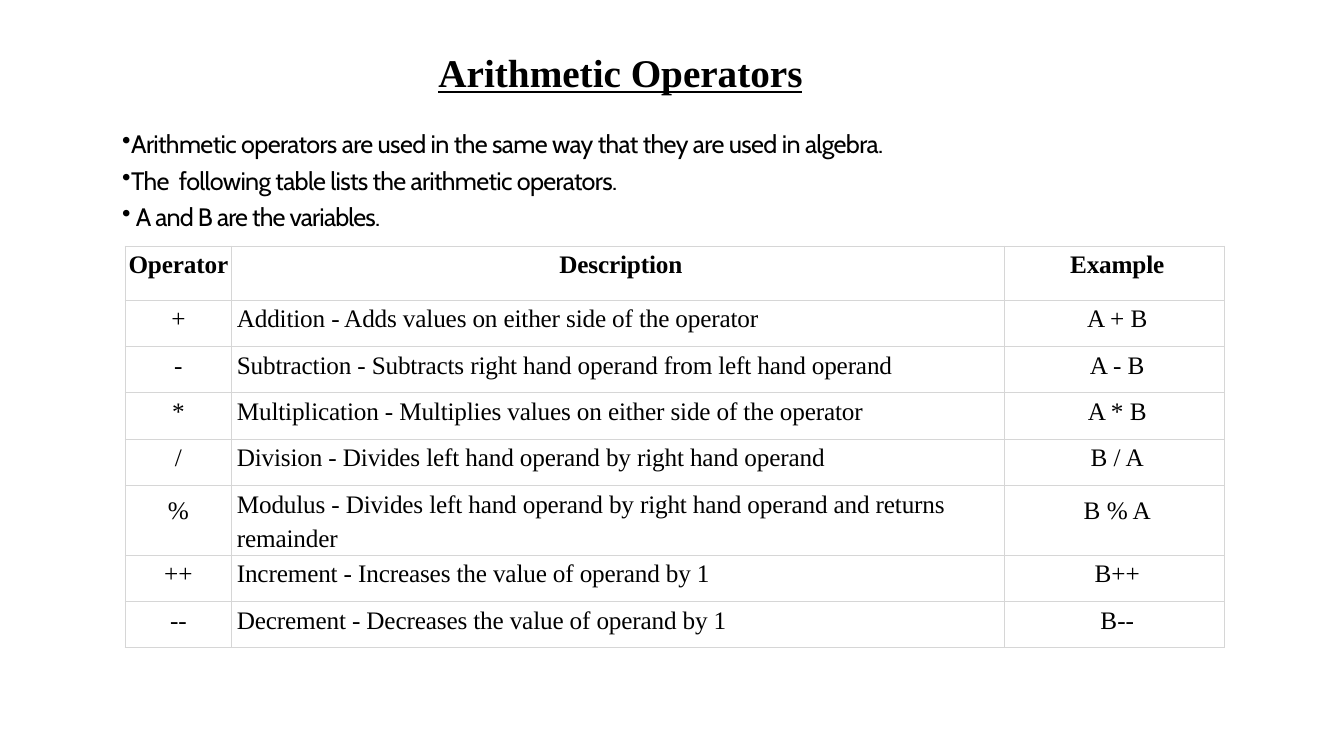
from lxml import etree
from pptx import Presentation
from pptx import util as u
from pptx.dml.color import RGBColor
from pptx.enum import text
from pptx.oxml import ns

LEFT, MID = text.PP_ALIGN.LEFT, text.PP_ALIGN.CENTER
TITLE = "Arithmetic Operators"
NOTES = [
    ("Arithmetic operators are used in the same way that they are used in algebra.", -0.45),
    ("The  following table lists the arithmetic operators.", -0.48),
    (" A and B are the variables.", -0.6),
]
ROWS = [
    ("Operator", "Description", "Example"),
    ("+", "Addition - Adds values on either side of the operator", "A + B"),
    ("-", "Subtraction - Subtracts right hand operand from left hand operand", "A - B"),
    ("*", "Multiplication - Multiplies values on either side of the operator", "A * B"),
    ("/", "Division - Divides left hand operand by right hand operand", "B / A"),
    ("%", "Modulus - Divides left hand operand by right hand operand and returns\nremainder", "B % A"),
    ("++", "Increment - Increases the value of operand by 1", "B++"),
    ("--", "Decrement - Decreases the value of operand by 1", "B--"),
]
WIDTHS = [76.3, 552.2, 157]
HEIGHTS = [39, 33, 33, 33, 33, 50.2, 33, 33]


def paint(code):
    """Turn a hex string into a colour."""
    return RGBColor.from_string(code)


def apply(item, **look):
    """Set each format value on an item."""
    for name, value in look.items():
        setattr(item, name, value)


def add(parent, tag, **attrs):
    """Append a drawing element with attributes."""
    return etree.SubElement(parent, ns.qn(tag), attrs)


class Page:
    """Hold the style and the current slide."""

    serif, sans = "Times New Roman", "Cabin"
    ink, paper, rule = "000000", "FFFFFF", "D6D6D6"

    def __init__(self, deck):
        """Start a title-only slide."""
        self.slide = deck.slides.add_slide(deck.slide_layouts[5])

    def frame(self, frame, pads, anchor):
        """Set the insets and anchor of a text frame."""
        left, top, right, low = map(u.Pt, pads)
        apply(frame, word_wrap=True, auto_size=text.MSO_AUTO_SIZE.NONE,
              vertical_anchor=anchor, margin_left=left, margin_top=top,
              margin_right=right, margin_bottom=low)

    def phrase(self, para, words, font, size, track=0, dent=0, look=None, **form):
        """Fill a paragraph with one styled run."""
        apply(para, **form)
        run = para.add_run()
        run.text = words
        apply(run.font, name=font, size=u.Pt(size), **(look or {}))
        run.font.color.rgb = paint(self.ink)
        run._r.get_or_add_rPr().set("spc", str(round(track * 100)))
        props = para._p.get_or_add_pPr()
        props.set("marL", str(u.Pt(dent)))
        props.set("indent", "0")
        return props

    def title(self, words, *box):
        """Place and format the title."""
        shape = self.slide.shapes.title
        apply(shape, **dict(zip(("left", "top", "width", "height"), map(u.Pt, box))))
        self.frame(shape.text_frame, (7.2, 3.6, 7.2, 3.6), text.MSO_ANCHOR.MIDDLE)
        self.phrase(shape.text_frame.paragraphs[0], words, self.serif, 28,
                    look={"bold": True, "underline": True},
                    alignment=LEFT, line_spacing=0.9)

    def points(self, notes, *box):
        """Draw a bulleted list."""
        frame = self.slide.shapes.add_textbox(*map(u.Pt, box)).text_frame
        self.frame(frame, (0, 0.9, 0, 0), text.MSO_ANCHOR.TOP)
        for i, (words, track) in enumerate(notes):
            para = frame.add_paragraph() if i else frame.paragraphs[0]
            props = self.phrase(para, words, self.sans, 18, track, 0.9,
                                line_spacing=1.17, space_before=u.Pt(0.9))
            add(props, "a:buChar", char="•")

    def cell(self, cell, words, head, column, gap):
        """Fill and edge one table cell."""
        props = cell._tc.get_or_add_tcPr()
        for side in "LRTB":
            line = add(props, f"a:ln{side}", w=str(u.Pt(0.75)))
            add(add(line, "a:solidFill"), "a:srgbClr", val=self.rule)
        cell.fill.solid()
        cell.fill.fore_color.rgb = paint(self.paper)
        apply(cell, margin_left=0, margin_right=0, margin_bottom=0, margin_top=u.Pt(gap))
        track = -0.1 if head or column == 1 else 0
        align = LEFT if column == 1 and not head else MID
        frame = cell.text_frame
        for i, part in enumerate(words.split("\n")):
            para = frame.add_paragraph() if i else frame.paragraphs[0]
            self.phrase(para, part, self.serif, 18, track, 3.6 if column else 0,
                        {"bold": head}, alignment=align, space_before=u.Pt(gap))

    def table(self, rows, widths, heights, left, top):
        """Draw the table of operators."""
        box = map(u.Pt, (left, top, sum(widths), sum(heights)))
        table = self.slide.shapes.add_table(len(rows), len(widths), *box).table
        apply(table, first_row=False, horz_banding=False)
        for column, width in zip(table.columns, widths):
            column.width = u.Pt(width)
        for r, (row, height) in enumerate(zip(rows, heights)):
            table.rows[r].height = u.Pt(height)
            tall = "\n" in row[1]
            for c, words in enumerate(row):
                gap = (4.2 if c == 1 else 8.7) if tall else 3.5 if r else 3.8
                self.cell(table.cell(r, c), words, r == 0, c, gap)


def main():
    """Build the slide and save it."""
    deck = Presentation()
    apply(deck, slide_width=u.Pt(960), slide_height=u.Pt(540))
    page = Page(deck)
    page.table(ROWS, WIDTHS, HEIGHTS, 89.3, 175.7)
    page.title(TITLE, 306, 24.5, 512.6, 57.6)
    page.points(NOTES, 86.4, 87.1, 789, 79.2)
    deck.save("out.pptx")


if __name__ == "__main__":
    main()
